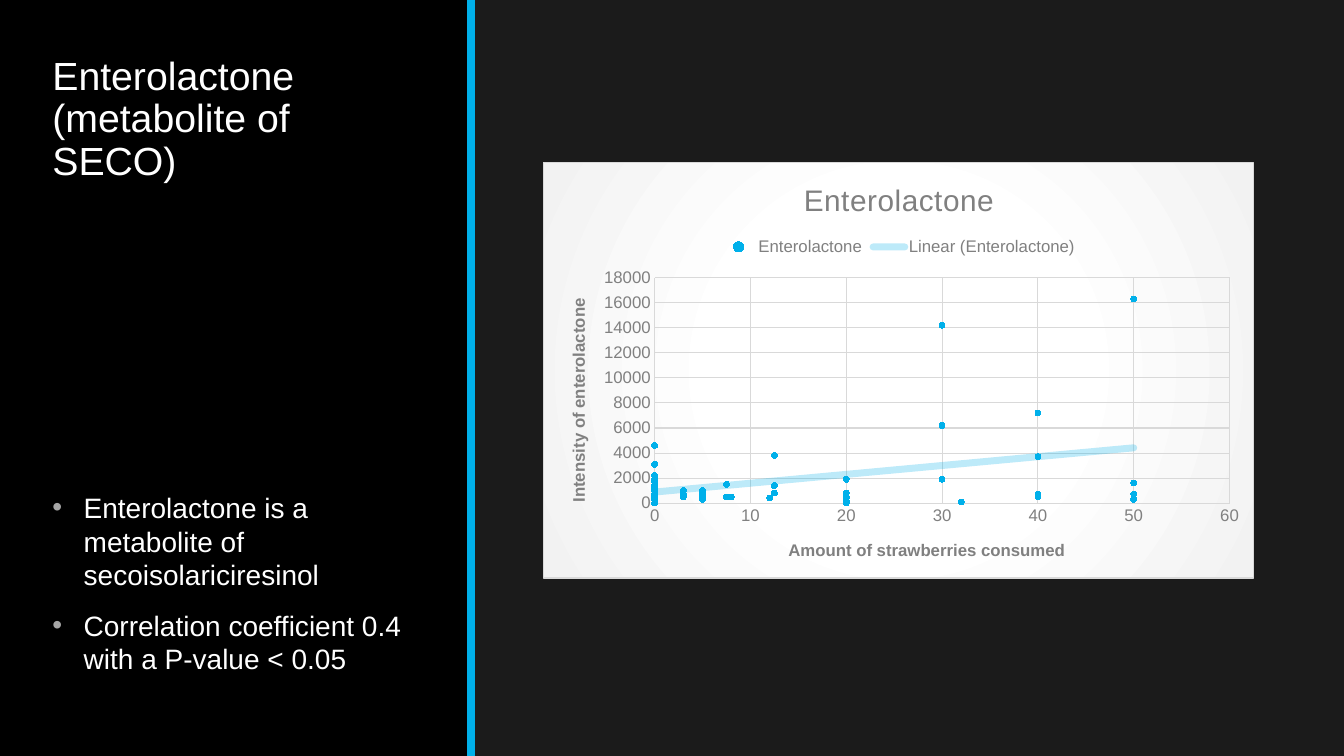
from pptx import Presentation
from pptx.chart.data import XyChartData
from pptx.dml.color import RGBColor
from pptx.enum.chart import XL_CHART_TYPE as ChartType, XL_LEGEND_POSITION as LegendPosition
from pptx.enum.chart import XL_MARKER_STYLE as MarkerStyle, XL_TICK_MARK as TickMark
from pptx.enum.shapes import MSO_CONNECTOR as Connector, MSO_SHAPE as Shape
from pptx.enum.text import MSO_ANCHOR as Anchor, MSO_AUTO_SIZE as AutoSize, PP_ALIGN as Align
from pptx.oxml import parse_xml
from pptx.oxml.ns import nsdecls, qn
from pptx.util import Inches, Pt

FONT = "Arial"
COLORS = {
    "background": "1B1B1B", "panel": "000000", "accent": "00B0EA", "text": "FFFFFF",
    "bullet": "A6A6A6", "label": "808080", "grid": "D9D9D9", "chart_edge": "F2F2F2",
}
BULLETS = [
    "Enterolactone is a metabolite of secoisolariciresinol",
    "Correlation coefficient 0.4 with a P-value < 0.05",
]
# Strawberries consumed, intensity of enterolactone
POINTS = [
    (20, 400), (8, 500), (20, 800), (40, 3700), (0, 1900), (30, 6200),
    (50, 300), (50, 16300), (12.5, 1400), (20, 1900), (30, 1900), (50, 700),
    (50, 1600), (30, 14200), (20, 200), (20, 500), (40, 7200), (32, 100),
    (3, 500), (5, 300), (0, 1300), (0, 1400), (5, 500), (0, 1800),
    (0, 700), (20, 0), (12.5, 800), (12.5, 800), (7.5, 500), (40, 500),
    (5, 800), (5, 900), (0, 1700), (0, 600), (0, 400), (40, 700),
    (0, 1800), (0, 600), (12, 400), (0, 1000), (12.5, 3800), (0, 0),
    (0, 600), (0, 1000), (0, 1800), (5, 1000), (0, 2200), (0, 600),
    (3, 1000), (7.5, 1500), (5, 600), (0, 300), (0, 4600), (0, 500),
    (0, 700), (0, 3100), (0, 500), (0, 1200), (3, 700),
]


def color(name):
    return RGBColor.from_string(COLORS[name])


def style_font(font, size, name, bold=False):
    font.name, font.size, font.bold = FONT, Pt(size), bold
    font.color.rgb = color(name)


def place(shape, left, top, width, height):
    shape.left, shape.top = Inches(left), Inches(top)
    shape.width, shape.height = Inches(width), Inches(height)


def add_panel(slide):
    panel = slide.shapes.add_shape(Shape.RECTANGLE, 0, 0, Inches(4.67), Inches(7.5))
    panel.shadow.inherit = False
    panel.fill.solid()
    panel.fill.fore_color.rgb = color("panel")
    panel.line.fill.background()
    edge = slide.shapes.add_connector(
        Connector.STRAIGHT, Inches(4.67), 0, Inches(4.67), Inches(7.5))
    edge.line.color.rgb = color("accent")
    edge.line.width = Pt(6)
    edge.element.spPr.append(parse_xml(f"<a:effectLst {nsdecls('a')}/>"))
    # Send both behind the placeholders
    tree = panel.element.getparent()
    tree.insert(2, panel.element)
    tree.insert(3, edge.element)


def fill_placeholder(box, text, size, anchor):
    frame = box.text_frame
    frame.text = text
    frame.word_wrap = True
    frame.auto_size = AutoSize.NONE
    frame.vertical_anchor = anchor
    for para in frame.paragraphs:
        para.alignment = Align.LEFT
        for span in para.runs:
            style_font(span.font, size, "text")
    return frame.paragraphs


def add_bullet(para):
    para.space_before = Pt(12)
    props = para._p.get_or_add_pPr()
    props.set("marL", str(Inches(0.31)))
    props.set("indent", str(-Inches(0.31)))
    props.append(parse_xml(
        f'<a:buClr {nsdecls("a")}><a:srgbClr val="{COLORS["bullet"]}"/></a:buClr>'))
    props.append(parse_xml(f'<a:buFont {nsdecls("a")} typeface="{FONT}"/>'))
    props.append(parse_xml(f'<a:buChar {nsdecls("a")} char="•"/>'))


def set_layout(part, index, **fractions):
    """Place a chart part by fractions of the chart size."""
    for old in part.findall(qn("c:layout")):
        part.remove(old)
    target = '<c:layoutTarget val="inner"/>' if "w" in fractions else ""
    modes = '<c:xMode val="edge"/><c:yMode val="edge"/>'
    values = "".join(f'<c:{key} val="{value}"/>' for key, value in fractions.items())
    part.insert(index, parse_xml(
        f"<c:layout {nsdecls('c')}><c:manualLayout>{target}{modes}{values}"
        "</c:manualLayout></c:layout>"))


def style_axis(axis, title, maximum, step, x, y):
    axis.minimum_scale, axis.maximum_scale, axis.major_unit = 0, maximum, step
    axis.major_tick_mark = axis.minor_tick_mark = TickMark.NONE
    axis.has_major_gridlines = True
    grid = axis.major_gridlines.format.line
    grid.color.rgb, grid.width = color("grid"), Pt(0.75)
    axis.format.line.fill.background()
    style_font(axis.tick_labels.font, 12, "label")
    axis.tick_labels.number_format = "General"
    axis.tick_labels.number_format_is_linked = False
    para = axis.axis_title.text_frame.paragraphs[0]
    para.text = title
    style_font(para.runs[0].font, 12, "label", bold=True)
    set_layout(axis.axis_title._element, 1, x=x, y=y)


def add_trend(series):
    trend = parse_xml(
        f'<c:trendline {nsdecls("c", "a")}><c:spPr><a:ln w="{Pt(5)}" cap="rnd"><a:solidFill>'
        f'<a:srgbClr val="{COLORS["accent"]}"><a:alpha val="25000"/></a:srgbClr>'
        '</a:solidFill></a:ln></c:spPr><c:trendlineType val="linear"/>'
        '<c:dispRSqr val="0"/><c:dispEq val="0"/></c:trendline>')
    series._element.find(qn("c:xVal")).addprevious(trend)


def fill_chart_area(chart):
    area = parse_xml(
        f'<c:spPr {nsdecls("c", "a")}><a:gradFill><a:gsLst>'
        f'<a:gs pos="43000"><a:srgbClr val="{COLORS["text"]}"/></a:gs>'
        f'<a:gs pos="100000"><a:srgbClr val="{COLORS["chart_edge"]}"/></a:gs></a:gsLst>'
        '<a:path path="circle"><a:fillToRect l="50000" t="50000" r="50000" b="50000"/></a:path>'
        f'</a:gradFill><a:ln w="{Pt(0.75)}"><a:solidFill>'
        f'<a:srgbClr val="{COLORS["grid"]}"/></a:solidFill></a:ln></c:spPr>')
    chart._chartSpace.find(qn("c:chart")).addnext(area)


def add_scatter(slide):
    data = XyChartData()
    plotted = data.add_series("Enterolactone")
    for amount, intensity in POINTS:
        plotted.add_data_point(amount, intensity)
    chart = slide.shapes.add_chart(
        ChartType.XY_SCATTER, Inches(5.39), Inches(1.61), Inches(7.05), Inches(4.13), data).chart
    style_font(chart.font, 10, "text")
    fill_chart_area(chart)

    # Title and legend
    chart.has_title = True
    para = chart.chart_title.text_frame.paragraphs[0]
    para.text = "Enterolactone"
    style_font(para.runs[0].font, 21.3, "label")
    para.runs[0].font._element.set("spc", "50")
    chart.has_legend = True
    chart.legend.position = LegendPosition.TOP
    chart.legend.include_in_layout = False
    style_font(chart.legend.font, 12, "label")

    # Points and trend
    chart.plots[0].vary_by_categories = False
    series = chart.plots[0].series[0]
    series.format.line.fill.background()
    marker = series.marker
    marker.style, marker.size = MarkerStyle.CIRCLE, 4
    marker.format.fill.solid()
    marker.format.fill.fore_color.rgb = color("accent")
    marker.format.line.color.rgb = color("accent")
    add_trend(series)

    # Axes
    style_axis(chart.category_axis, "Amount of strawberries consumed", 60, 10, 0.34, 0.9)
    style_axis(chart.value_axis, "Intensity of enterolactone", 18000, 2000, 0.03, 0.32)
    plot_area = chart._chartSpace.find(qn("c:chart")).find(qn("c:plotArea"))
    set_layout(plot_area, 0, x=0.156, y=0.277, w=0.81, h=0.543)


def main():
    deck = Presentation()
    deck.slide_width, deck.slide_height = Inches(13.33), Inches(7.5)
    slide = deck.slides.add_slide(deck.slide_layouts[1])
    slide.background.fill.solid()
    slide.background.fill.fore_color.rgb = color("background")
    add_panel(slide)

    # Title and bullets
    title, body = slide.shapes.title, slide.placeholders[1]
    place(title, 0.42, 0.51, 3.83, 1.75)
    heading = fill_placeholder(title, "Enterolactone\v(metabolite of SECO)", 28, Anchor.TOP)
    heading[0].line_spacing = 0.9
    place(body, 0.42, 4.1, 3.83, 2.65)
    for para in fill_placeholder(body, "\n".join(BULLETS), 20, Anchor.BOTTOM):
        add_bullet(para)

    add_scatter(slide)
    deck.save("out.pptx")


if __name__ == "__main__":
    main()
